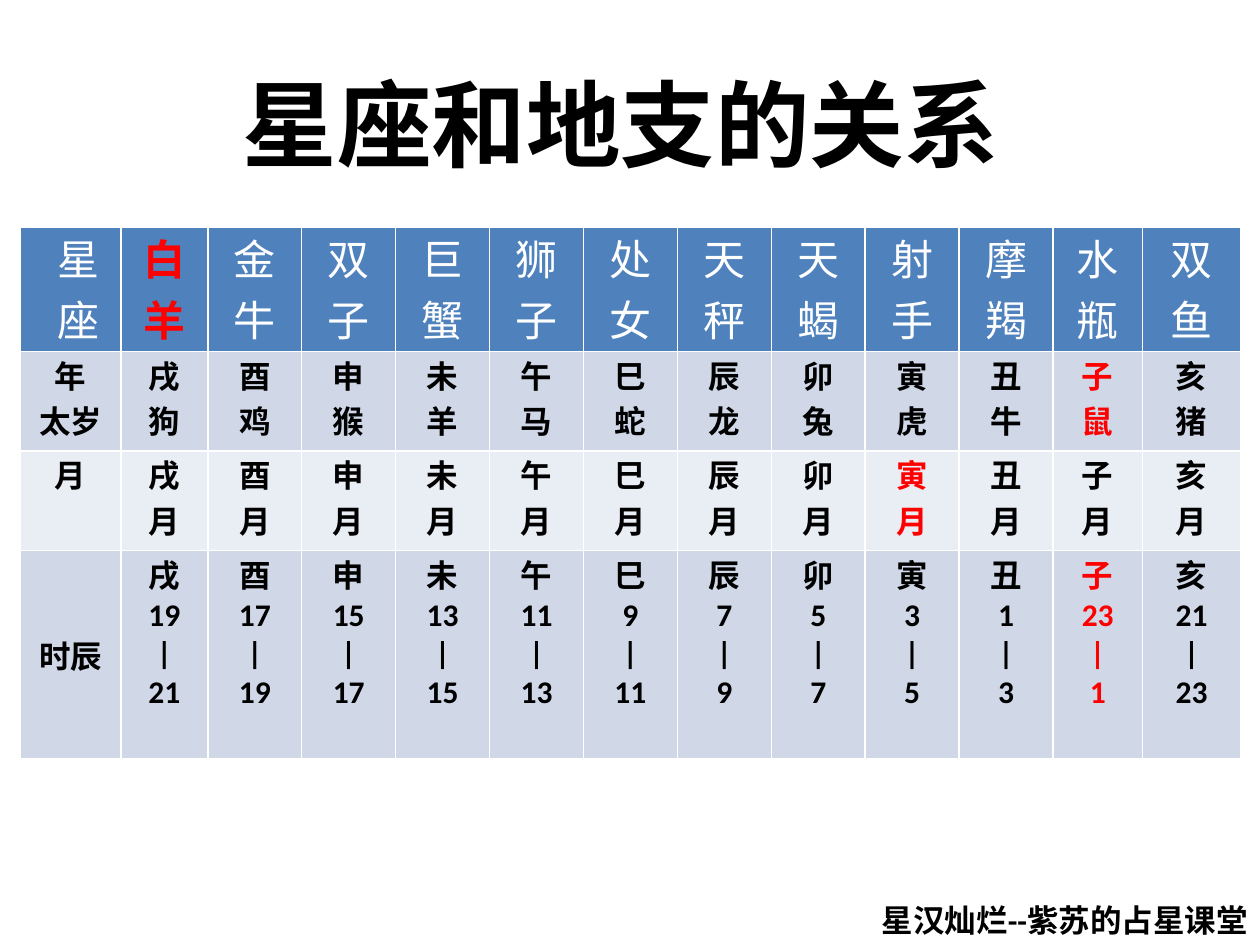
from pptx import Presentation
from pptx import util as u
from pptx.dml.color import RGBColor
from pptx.enum import shapes, text
from pptx.oxml.ns import qn
from lxml import etree

# Content
TITLE = "星座和地支的关系"
FOOT = "星汉灿烂--紫苏的占星课堂"
SIGNS = ["白羊", "金牛", "双子", "巨蟹", "狮子", "处女",
         "天秤", "天蝎", "射手", "摩羯", "水瓶", "双鱼"]
TWIGS = "戌酉申未午巳辰卯寅丑子亥"
BEASTS = "狗鸡猴羊马蛇龙兔虎牛鼠猪"
STARTS = [(19 - 2 * i) % 24 for i in range(12)]
ROWS = [
    [["星", "座"]] + [list(s) for s in SIGNS],
    [["年", "太岁"]] + [list(p) for p in zip(TWIGS, BEASTS)],
    [["月"]] + [[t, "月"] for t in TWIGS],
    [["时辰"]] + [[t, str(h), "|", str((h + 2) % 24)]
                for t, h in zip(TWIGS, STARTS)],
]
MARKED = {(0, 1), (1, 11), (2, 9), (3, 11)}

# Style
HEX = {"head": "4F81BD", "band": "D0D8E8", "pale": "E9EDF4",
       "red": "FF0000", "black": "000000", "white": "FFFFFF"}
FILLS = ["head", "band", "pale", "band"]
CJK = "Noto Sans CJK SC"
WIDE, HIGH = 10, 7.5
LEFT, TOP, SPAN = 0.16, 1.8, 9.69
TALL = [0.99, 0.79, 0.79, 1.65]
ENDS = {0: 0.8, 1: 0.69, 11: 0.71, 12: 0.78}
MID = (SPAN - sum(ENDS.values())) / 9


def color(name):
    return RGBColor.from_string(HEX[name])


def write(par, words, size, tint, bold=True, face="Calibri",
          align=text.PP_ALIGN.CENTER):
    par.alignment = align
    run = par.add_run()
    run.text = words
    font = run.font
    font.size, font.bold, font.name = u.Pt(size), bold, face
    font.color.rgb = color(tint)
    east = etree.SubElement(run._r.get_or_add_rPr(), qn("a:ea"))
    east.set("typeface", CJK)


def border(cell):
    props = cell._tc.get_or_add_tcPr()
    for n, side in enumerate(("lnL", "lnR", "lnT", "lnB")):
        line = etree.Element(qn("a:" + side), w=str(u.Pt(1)))
        fill = etree.SubElement(line, qn("a:solidFill"))
        etree.SubElement(fill, qn("a:srgbClr"), val=HEX["white"])
        props.insert(n, line)


def main():
    deck = Presentation()
    deck.slide_width, deck.slide_height = u.Inches(WIDE), u.Inches(HIGH)
    slide = deck.slides.add_slide(deck.slide_layouts[5])

    # Title
    title = slide.shapes.title
    title.left, title.top = u.Inches(1.72), u.Inches(0.47)
    title.width, title.height = u.Inches(6.41), u.Inches(1.01)
    frame = title.text_frame
    frame.vertical_anchor = text.MSO_ANCHOR.TOP
    write(frame.paragraphs[0], TITLE, 54, "black", face=CJK)

    # Table of signs and branches
    table = slide.shapes.add_table(
        len(ROWS), len(ROWS[0]), u.Inches(LEFT), u.Inches(TOP),
        u.Inches(SPAN), u.Inches(sum(TALL))).table
    for c, col in enumerate(table.columns):
        col.width = u.Inches(ENDS.get(c, MID))
    for r, row in enumerate(ROWS):
        table.rows[r].height = u.Inches(TALL[r])
        for c, lines in enumerate(row):
            cell = table.cell(r, c)
            cell.fill.solid()
            cell.fill.fore_color.rgb = color(FILLS[r])
            cell.margin_left = cell.margin_right = u.Inches(0.07)
            cell.margin_top = cell.margin_bottom = 0
            border(cell)
            mark = (r, c) in MARKED
            tint = "red" if mark else "black" if r else "white"
            for n, words in enumerate(lines):
                frame = cell.text_frame
                par = frame.add_paragraph() if n else frame.paragraphs[0]
                write(par, words, 18 if r else 24, tint, mark or r > 0)
                if r == c == 0:
                    par._p.get_or_add_pPr().set("marL", str(u.Inches(0.12)))
    table.cell(3, 0).vertical_anchor = text.MSO_ANCHOR.MIDDLE

    # Footer strip
    strip = slide.shapes.add_shape(
        shapes.MSO_SHAPE.RECTANGLE, 0, u.Inches(7.1),
        u.Inches(WIDE), u.Inches(0.4))
    strip.shadow.inherit = False
    strip.line.fill.background()
    strip.fill.solid()
    strip.fill.fore_color.rgb = color("white")
    tone = strip.fill._xPr.find(qn("a:solidFill"))[0]
    etree.SubElement(tone, qn("a:alpha"), val="40000")
    frame = strip.text_frame
    frame.word_wrap = True
    write(frame.paragraphs[0], FOOT, 18, "black",
          align=text.PP_ALIGN.RIGHT)

    deck.save("out.pptx")


if __name__ == "__main__":
    main()
